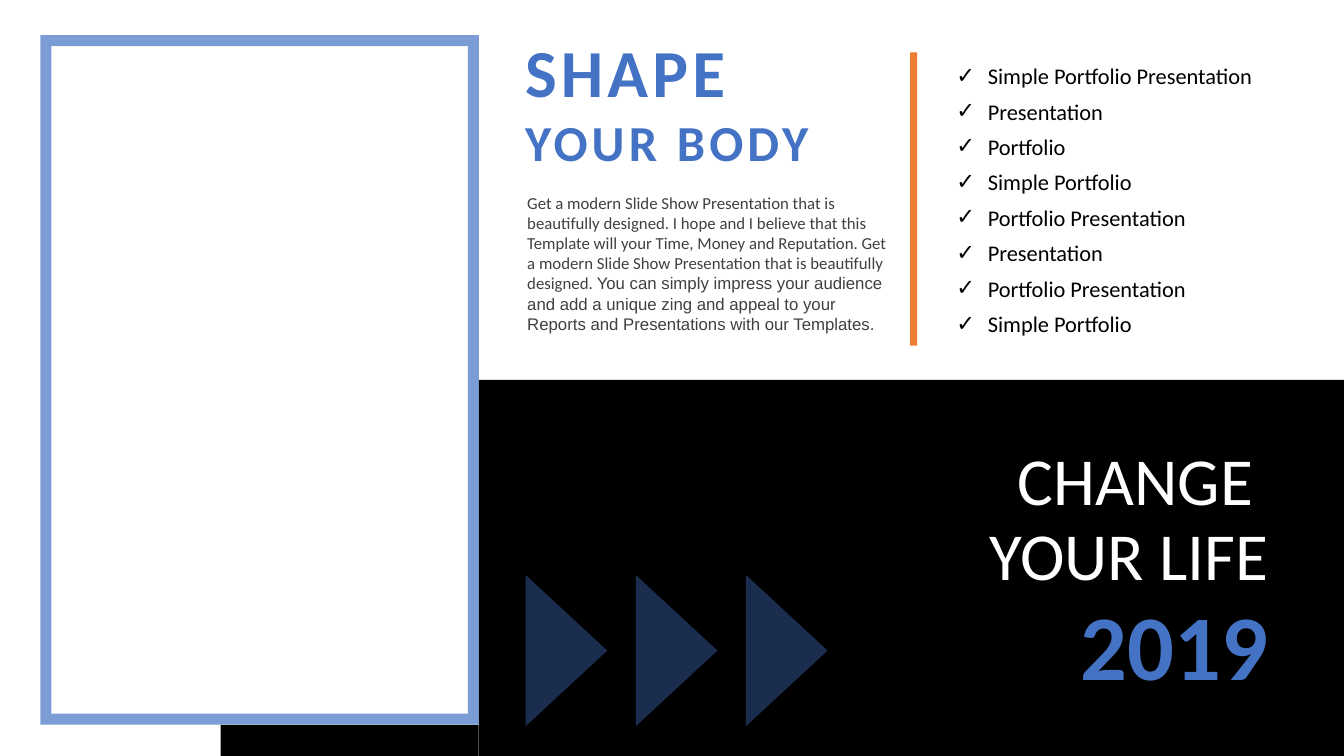
from dataclasses import dataclass, field
from typing import Any

from lxml import etree
from pptx import Presentation
from pptx import util as u
from pptx.dml.color import RGBColor
from pptx.enum import shapes, text
from pptx.oxml.ns import qn

BLUE, ORANGE, BLACK, WHITE, GRAY = "4472C4", "ED7D31", "000000", "FFFFFF", "404040"
SHAPE = shapes.MSO_SHAPE
ALIGN = text.PP_ALIGN
Box = tuple[float, float, float, float]  # left, top, width, height in points


@dataclass
class Block:
    preset: Any
    box: Box
    color: str
    opacity: int = 100
    rotation: float = 0
    adjustment: float | None = None


@dataclass
class Label:
    box: Box
    runs: list[tuple[str, str]]  # wording, font name
    size: float
    color: str
    bold: bool = False
    spacing: float = 0
    bullet: str = ""
    frame: dict[str, Any] = field(default_factory=dict)
    paragraph: dict[str, Any] = field(default_factory=dict)


def rgb(value: str) -> RGBColor:
    return RGBColor.from_string(value)


def points(box: Box) -> list[int]:
    return [u.Pt(length) for length in box]


def apply(target: Any, values: dict[str, Any]) -> None:
    for name, value in values.items():
        setattr(target, name, value)


def draw_block(slide: Any, block: Block) -> None:
    shape = slide.shapes.add_shape(block.preset, *points(block.box))
    shape.shadow.inherit = False
    shape.rotation = block.rotation
    shape.fill.solid()
    shape.fill.fore_color.rgb = rgb(block.color)
    shape.line.fill.background()
    if block.adjustment is not None:
        shape.adjustments[0] = block.adjustment
    if block.opacity < 100:
        fill_color = next(shape._element.spPr.iter(qn("a:srgbClr")))
        etree.SubElement(fill_color, qn("a:alpha"), val=str(block.opacity * 1000))


def add_bullet(paragraph: Any, symbol: str, indent: float) -> None:
    properties = paragraph._p.get_or_add_pPr()
    properties.set("marL", str(u.Pt(indent)))
    properties.set("indent", str(-u.Pt(indent)))
    etree.SubElement(properties, qn("a:buFont"), typeface="Arial")
    etree.SubElement(properties, qn("a:buChar"), char=symbol)


def draw_label(slide: Any, label: Label) -> None:
    frame = slide.shapes.add_textbox(*points(label.box)).text_frame
    apply(frame, {"word_wrap": True,
                  "auto_size": text.MSO_AUTO_SIZE.SHAPE_TO_FIT_TEXT} | label.frame)
    paragraph = frame.paragraphs[0]
    apply(paragraph, label.paragraph)
    if label.bullet:
        add_bullet(paragraph, label.bullet, 22.5)
    for wording, font_name in label.runs:
        run = paragraph.add_run()
        run.text = wording
        apply(run.font, {"name": font_name, "size": u.Pt(label.size), "bold": label.bold})
        run.font.color.rgb = rgb(label.color)
        if label.spacing:
            run.font._element.set("spc", str(round(label.spacing * 100)))


# Black panel, photo frame and divider
BLOCKS = [
    Block(SHAPE.RECTANGLE, (342, 271.4, 618, 268.6), BLACK),
    Block(SHAPE.RECTANGLE, (157.7, 517.7, 184.3, 22.3), BLACK),
    Block(SHAPE.FRAME, (28.8, 25.2, 313.2, 492.5), BLUE, opacity=70, adjustment=0.025),
    Block(SHAPE.RECTANGLE, (650.2, 37.4, 5, 209.5), ORANGE),
]

# Row of arrows
ARROWS = [
    Block(SHAPE.ISOSCELES_TRIANGLE, (350.6 + 78.7 * column, 435.6, 108, 58.3),
          BLUE, opacity=40, rotation=90)
    for column in range(3)
]

# Heading and description
INTRO = [
    Label((368, 25.2, 262, 50.4), [("SHAPE ", "Calibri")], 48, BLUE, bold=True, spacing=3,
          frame={"auto_size": text.MSO_AUTO_SIZE.NONE,
                 "vertical_anchor": text.MSO_ANCHOR.MIDDLE},
          paragraph={"alignment": ALIGN.JUSTIFY, "space_before": u.Pt(6.4)}),
    Label((368, 75.6, 262, 51), [("YOUR BODY", "Calibri")], 36, BLUE, bold=True, spacing=3,
          paragraph={"alignment": ALIGN.JUSTIFY}),
    Label((368, 134, 274.3, 123.8), [
        ("Get a modern Slide Show Presentation that is beautifully designed. "
         "I hope and I believe that this Template will your Time, Money and Reputation. "
         "Get a modern Slide Show Presentation that is beautifully designed. ", "Calibri"),
        ("You can simply impress your audience and add a unique zing and appeal "
         "to your Reports and Presentations with our Templates.", "Arial"),
    ], 12, GRAY, frame={"margin_left": u.Pt(8.6), "margin_right": u.Pt(8.6)}),
]

# Closing slogan
SLOGAN = [
    Label((599, top, 314, height), [(wording, "Calibri")], size, color, bold=bold,
          paragraph={"alignment": ALIGN.RIGHT})
    for wording, top, height, size, color, bold in [
        ("CHANGE ", 309.6, 65.5, 48, WHITE, False),
        ("YOUR LIFE", 362.9, 65.5, 48, WHITE, False),
        ("2019", 416.9, 87.1, 66, BLUE, True),
    ]
]

# Checklist
CHECKLIST = [
    Label((676, 44.6 + 25.3 * row, 258.5, 23), [(wording, "Calibri")], 16, BLACK,
          bullet="✓", paragraph={"line_spacing": 0.8})
    for row, wording in enumerate([
        "Simple Portfolio Presentation", "Presentation", "Portfolio", "Simple Portfolio",
        "Portfolio Presentation", "Presentation", "Portfolio Presentation",
        "Simple Portfolio",
    ])
]


def main() -> None:
    deck = Presentation()
    apply(deck, {"slide_width": u.Pt(960), "slide_height": u.Pt(540)})
    slide = deck.slides.add_slide(deck.slide_layouts[6])
    for block in BLOCKS + ARROWS:
        draw_block(slide, block)
    for label in INTRO + SLOGAN + CHECKLIST:
        draw_label(slide, label)
    deck.save("out.pptx")


if __name__ == "__main__":
    main()
